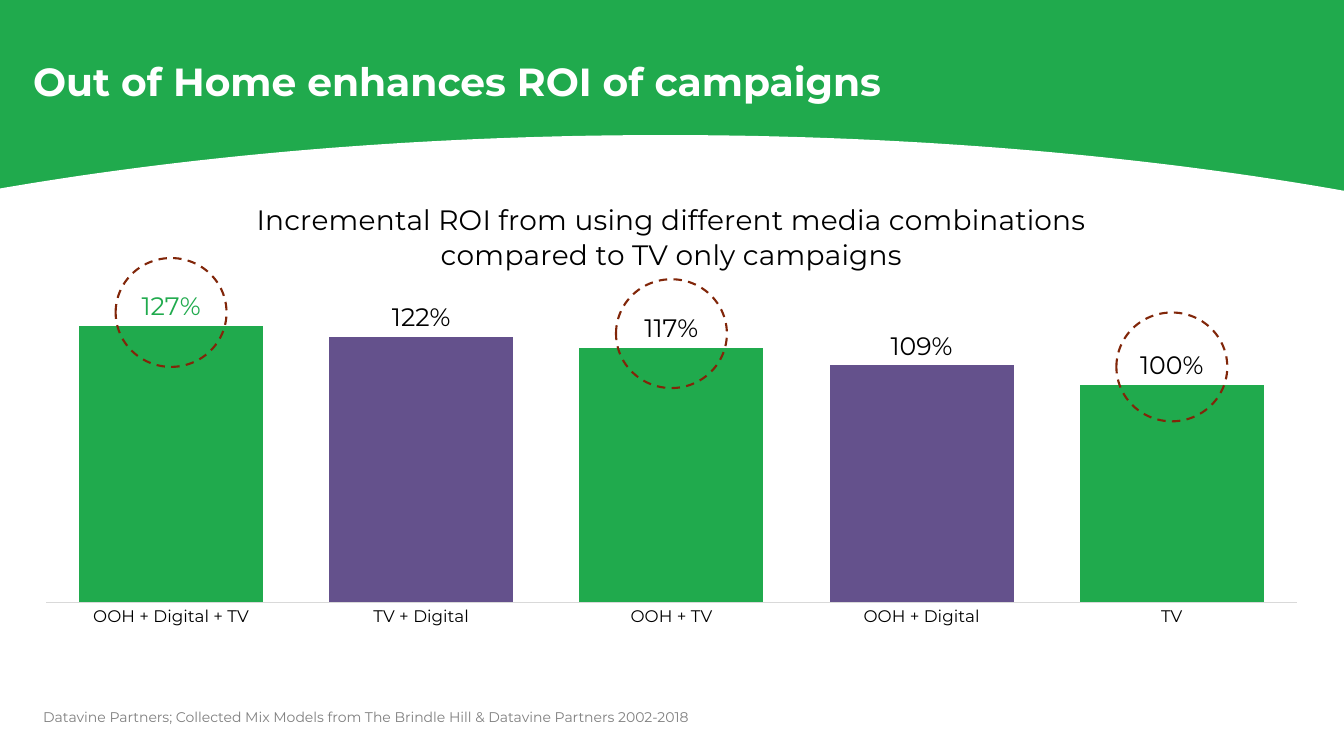
import pptx
import pptx.chart.data
import pptx.dml.color
import pptx.enum.chart
import pptx.enum.dml
import pptx.enum.shapes
import pptx.enum.text
import pptx.oxml
import pptx.oxml.ns
import pptx.util
from dataclasses import dataclass

Inches = pptx.util.Inches
Pt = pptx.util.Pt


def rgb(value):
    return pptx.dml.color.RGBColor.from_string(value)


@dataclass(frozen=True)
class Theme:
    font: str = "Montserrat"
    green: str = "20AA4D"
    purple: str = "64518C"
    white: str = "FFFFFF"
    black: str = "000000"
    grey: str = "808080"
    axis: str = "D9D9D9"
    ring: str = "812609"
    title: int = 28
    heading: int = 20
    value: int = 18
    category: int = 12
    source: int = 10


class SlideBuilder:
    def __init__(self, prs, theme):
        self.theme = theme
        self.s = prs.slides.add_slide(prs.slide_layouts[6])

    def style(self, font, size, color, bold=False):
        font.name, font.size, font.bold = self.theme.font, Pt(size), bold
        font.color.rgb = rgb(color)

    def background(self, color):
        fill = self.s.background.fill
        fill.solid()
        fill.fore_color.rgb = rgb(color)

    def outline(self, points, color):
        points = [(Inches(x), Inches(y)) for x, y in points]
        builder = self.s.shapes.build_freeform(*points[0], scale=1.0)
        builder.add_line_segments(points[1:], close=True)
        sp = builder.convert_to_shape()
        sp.shadow.inherit = False
        sp.fill.solid()
        sp.fill.fore_color.rgb = rgb(color)
        sp.line.fill.background()

    def text(self, text, box, size, color, bold=False, spacing=None, title=False):
        sp = self.s.shapes.add_textbox(*map(Inches, box))
        tf = sp.text_frame
        tf.word_wrap = True
        if title:
            tf.vertical_anchor = pptx.enum.text.MSO_ANCHOR.BOTTOM
            tf.margin_left = tf.margin_right = tf.margin_top = tf.margin_bottom = 0
        tf.text = text
        p = tf.paragraphs[0]
        p.line_spacing = spacing
        self.style(p.runs[0].font, size, color, bold)

    def ring(self, center_x, top, width=1.1, height=1.08):
        sp = self.s.shapes.add_shape(
            pptx.enum.shapes.MSO_SHAPE.OVAL, Inches(center_x - width / 2),
            Inches(top), Inches(width), Inches(height))
        sp.shadow.inherit = False
        sp.fill.background()
        sp.line.color.rgb = rgb(self.theme.ring)
        sp.line.width = Pt(1.5)
        sp.line.dash_style = pptx.enum.dml.MSO_LINE.DASH

    def columns(self, box, heading, bars, layout):
        t = self.theme
        data = pptx.chart.data.CategoryChartData(number_format="0%")
        data.categories = [name for name, value, color in bars]
        data.add_series("Series 1", [value for name, value, color in bars])
        chart = self.s.shapes.add_chart(
            pptx.enum.chart.XL_CHART_TYPE.COLUMN_CLUSTERED,
            *map(Inches, box), data).chart
        self.style(chart.font, t.source, t.black)
        chart.has_legend = False

        # Heading
        tf = chart.chart_title.text_frame
        tf.text = heading
        for p in tf.paragraphs:
            self.style(p.runs[0].font, t.heading, t.black)
        chart.chart_title.include_in_layout = False

        # Axes
        axis = chart.category_axis
        axis.major_tick_mark = pptx.enum.chart.XL_TICK_MARK.NONE
        self.style(axis.tick_labels.font, t.category, t.black)
        axis.format.line.color.rgb = rgb(t.axis)
        axis.format.line.width = Pt(0.75)
        axis = chart.value_axis
        axis.minimum_scale, axis.maximum_scale, axis.major_unit = 0, 1.45, 0.1
        axis.has_major_gridlines = False
        axis.visible = False

        # Bars and value labels
        plot = chart.plots[0]
        plot.gap_width, plot.overlap = 36, -46
        plot.vary_by_categories = False
        series = plot.series[0]
        for i, (name, value, color) in enumerate(bars):
            fill = series.points[i].format.fill
            fill.solid()
            fill.fore_color.rgb = rgb(color)
        labels = series.data_labels
        labels.show_value = True
        labels.number_format = "0%"
        labels.number_format_is_linked = False
        first = series.points[0].data_label
        for label, color in ((labels, t.black), (first, t.green)):
            label.position = pptx.enum.chart.XL_LABEL_POSITION.OUTSIDE_END
            self.style(label.font, t.value, color)

        # Fixed inner plot area
        area = plot._element.getparent()
        for old in area.findall(pptx.oxml.ns.qn("c:layout")):
            area.remove(old)
        sizes = "".join(f'<c:{k} val="{v}"/>' for k, v in zip("xywh", layout))
        area.insert(0, pptx.oxml.parse_xml(
            f'<c:layout {pptx.oxml.ns.nsdecls("c")}><c:manualLayout>'
            '<c:layoutTarget val="inner"/><c:xMode val="edge"/>'
            f'<c:yMode val="edge"/>{sizes}</c:manualLayout></c:layout>'))


def arch(center=6.6, steps=40):
    """White area whose top edge is a curve mirrored about its center."""
    xs, ys = (0, 2.54, 4.91, 6.88), (1.34, 1.34, 1.56, 1.92)
    half = []
    for i in range(steps + 1):
        u = i / steps
        weights = ((1 - u) ** 3, 3 * u * (1 - u) ** 2, 3 * u * u * (1 - u), u ** 3)
        half.append([sum(w * c for w, c in zip(weights, cs)) for cs in (xs, ys)])
    left = [(center - x, y) for x, y in reversed(half)]
    right = [(center + x, y) for x, y in half[1:]]
    return [(-0.31, 1.92)] + left + right + [(13.67, 1.96), (13.67, 7.5), (-0.31, 7.5)]


def main():
    prs = pptx.Presentation()
    prs.slide_width, prs.slide_height = Inches(13.33), Inches(7.5)
    t = Theme()
    slide = SlideBuilder(prs, t)

    # Header band
    slide.background(t.green)
    slide.outline(arch(), t.white)
    slide.text("Out of Home enhances ROI of campaigns", (0.33, 0.06, 10.24, 0.98),
               t.title, t.white, bold=True, spacing=1.1, title=True)

    # Chart
    bars = [("OOH + Digital + TV", 1.27, t.green), ("TV + Digital", 1.22, t.purple),
            ("OOH + TV", 1.17, t.green), ("OOH + Digital", 1.09, t.purple),
            ("TV", 1, t.green)]
    box = left, top, width, height = 0.33, 1.82, 12.66, 4.67
    layout = x, y, w, h = 0.01, 0.22, 0.98, 0.67
    slide.columns(box, "Incremental ROI from using different media combinations\n"
                  "compared to TV only campaigns", bars, layout)

    # Rings centred on every second bar
    step = width * w / len(bars)
    for i, ring_top in ((0, 2.56), (2, 2.77), (4, 3.1)):
        slide.ring(left + width * x + step * (i + 0.5), ring_top)

    # Source line
    slide.text("Datavine Partners; Collected Mix Models from The Brindle Hill "
               "& Datavine Partners 2002-2018", (0.33, 6.98, 12.31, 0.27),
               t.source, t.grey)
    prs.save("out.pptx")


if __name__ == "__main__":
    main()
